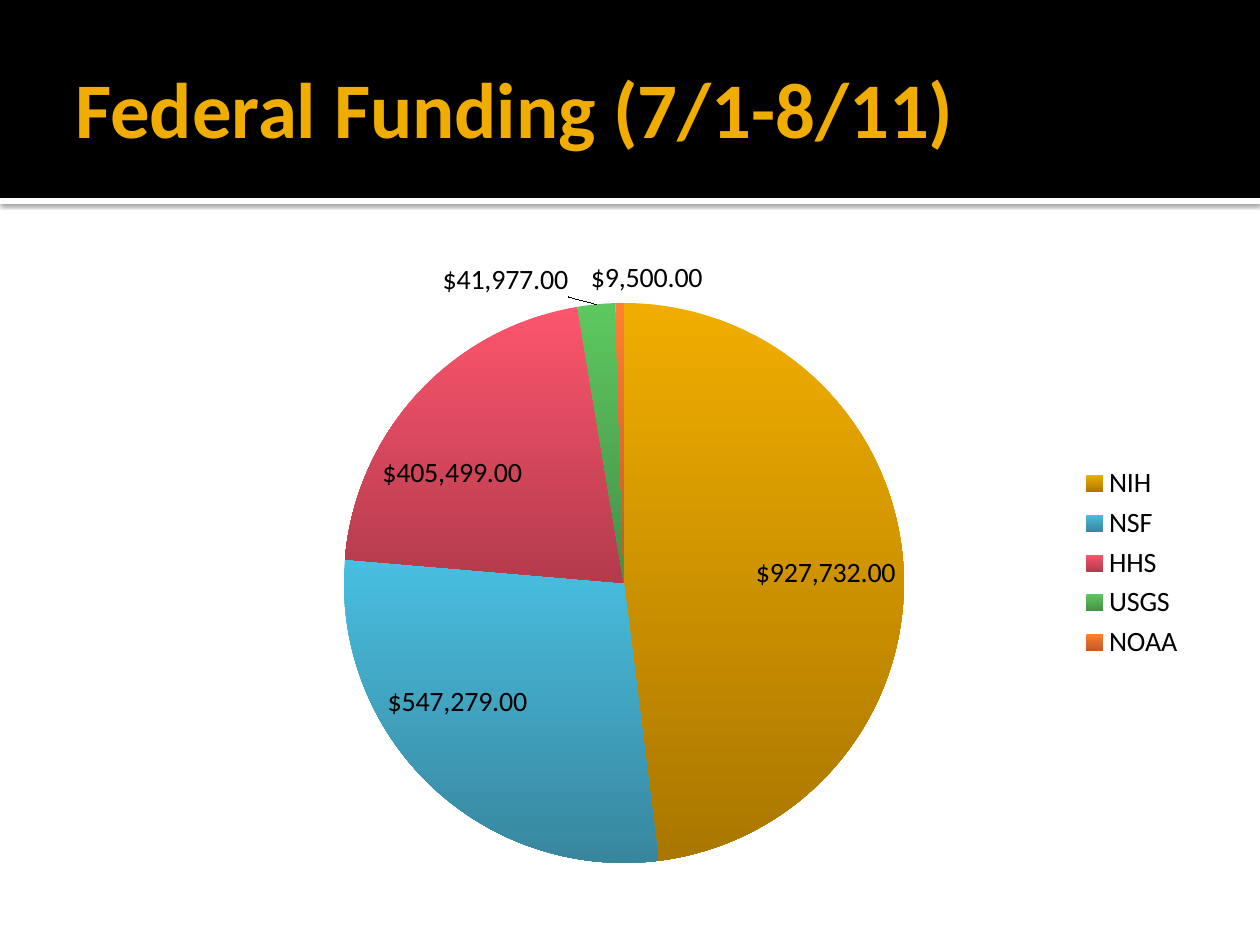
from lxml import etree
from pptx import Presentation
from pptx import util as u
from pptx.chart.data import CategoryChartData
from pptx.dml.color import RGBColor
from pptx.enum import chart as charts, shapes, text
from pptx.oxml import parse_xml
from pptx.oxml.ns import nsdecls, qn

PX = 914400 // 126
FONT = "Calibri"
COLORS = {"band": "000000", "rule": "FFFFFF", "title": "F0AD00", "text": "000000"}
TITLE = "Federal Funding (7/1-8/11)"
# agency, dollars, gradient top, gradient bottom
FUNDING = [
    ("NIH", 927732, "F0AD00", "AA7700"),
    ("NSF", 547279, "48BEE0", "38869E"),
    ("HHS", 405499, "FC556D", "B43B4C"),
    ("USGS", 41977, "5DC85F", "468F48"),
    ("NOAA", 9500, "FF7F35", "BF5A25"),
]
BAND = (0, 0, 1260, 198)
RULE = (0, 198, 1260, 6)
TITLE_BOX = (63, 21, 1134, 173)
CHART = (63, 244, 1134, 638)
PIE = (344, 303, 560, 560)


def emu(box):
    return [value * PX for value in box]


def rgb(value):
    return RGBColor.from_string(value)


def add_bar(slide, box, color):
    bar = slide.shapes.add_shape(shapes.MSO_SHAPE.RECTANGLE, *emu(box))
    bar.shadow.inherit = False
    bar.fill.solid()
    bar.fill.fore_color.rgb = rgb(color)
    bar.line.fill.background()
    return bar


def add_soft_shadow(shape):
    effects = shape.element.spPr.find(qn("a:effectLst"))
    effects.append(parse_xml(
        f'<a:outerShdw {nsdecls("a")} blurRad="31750" dist="10160" dir="5400000" '
        'algn="tl" rotWithShape="0"><a:srgbClr val="000000">'
        '<a:alpha val="60000"/></a:srgbClr></a:outerShdw>'))


def add_title(slide):
    box = slide.shapes.add_textbox(*emu(TITLE_BOX))
    frame = box.text_frame
    frame.word_wrap = True
    frame.vertical_anchor = text.MSO_ANCHOR.MIDDLE
    frame.margin_right = u.Inches(0.05)
    frame.text = TITLE
    font = frame.paragraphs[0].runs[0].font
    font.name, font.size, font.bold = FONT, u.Pt(45), True
    font.color.rgb = rgb(COLORS["title"])


def place_plot(chart):
    """Fix the pie inside the chart frame, as fractions of that frame."""
    left, top, width, height = CHART
    fractions = {"x": (PIE[0] - left) / width, "y": (PIE[1] - top) / height,
                 "w": PIE[2] / width, "h": PIE[3] / height}
    area = chart.element.find(".//" + qn("c:plotArea"))
    for old in area.findall(qn("c:layout")):
        area.remove(old)
    layout = parse_xml(f'<c:layout {nsdecls("c")}><c:manualLayout/></c:layout>')
    settings = {"layoutTarget": "inner", "xMode": "edge", "yMode": "edge"}
    settings.update({key: f"{value:.4f}" for key, value in fractions.items()})
    for key, value in settings.items():
        etree.SubElement(layout[0], qn("c:" + key)).set("val", value)
    area.insert(0, layout)


def add_pie(slide):
    data = CategoryChartData()
    data.categories = [row[0] for row in FUNDING]
    data.add_series("Series 1", [row[1] for row in FUNDING])
    chart = slide.shapes.add_chart(charts.XL_CHART_TYPE.PIE, *emu(CHART), data).chart
    chart.has_title = False
    chart.font.name, chart.font.size = FONT, u.Pt(10)
    chart.font.color.rgb = rgb(COLORS["text"])
    chart.has_legend = True
    chart.legend.position = charts.XL_LEGEND_POSITION.RIGHT
    chart.legend.include_in_layout = False
    chart.legend.font.size = u.Pt(16)

    plot = chart.plots[0]
    plot.vary_by_categories = True
    series = plot.series[0]
    for index, (_, _, top, bottom) in enumerate(FUNDING):
        fill = series.points[index].format.fill
        fill.gradient()
        fill.gradient_angle = 270
        for stop, color in zip(fill.gradient_stops, (top, bottom)):
            stop.color.rgb = rgb(color)

    labels = series.data_labels
    labels.show_value = True
    labels.number_format = '"$"#,##0.00;\\("$"#,##0.00\\)'
    labels.number_format_is_linked = False
    labels.position = charts.XL_LABEL_POSITION.BEST_FIT
    labels.font.size = u.Pt(16)
    place_plot(chart)


def main():
    deck = Presentation()
    deck.slide_width, deck.slide_height = u.Inches(10), u.Inches(7.5)
    slide = deck.slides.add_slide(deck.slide_layouts[6])
    add_soft_shadow(add_bar(slide, RULE, COLORS["rule"]))
    add_bar(slide, BAND, COLORS["band"])
    add_title(slide)
    add_pie(slide)
    deck.save("out.pptx")


if __name__ == "__main__":
    main()
